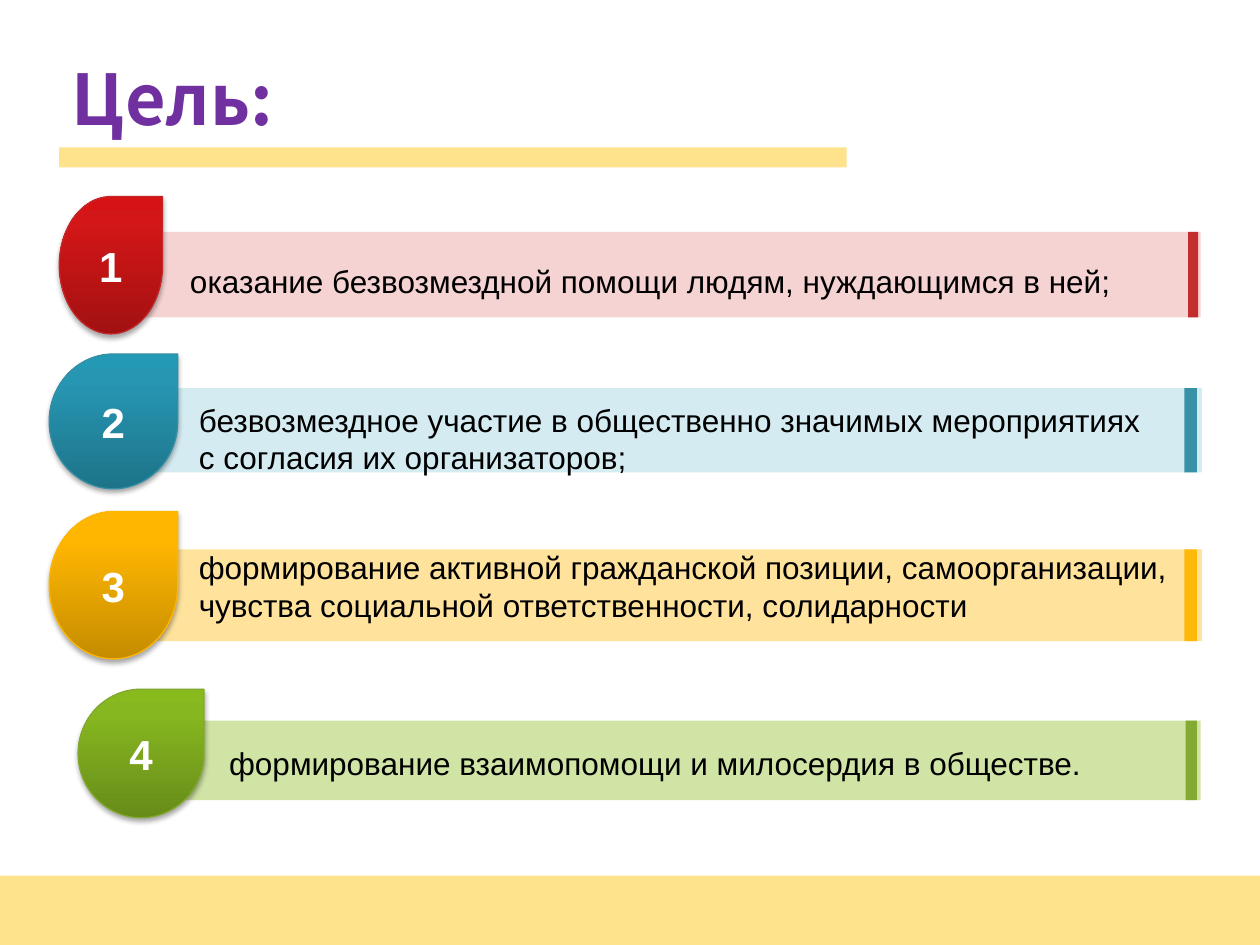
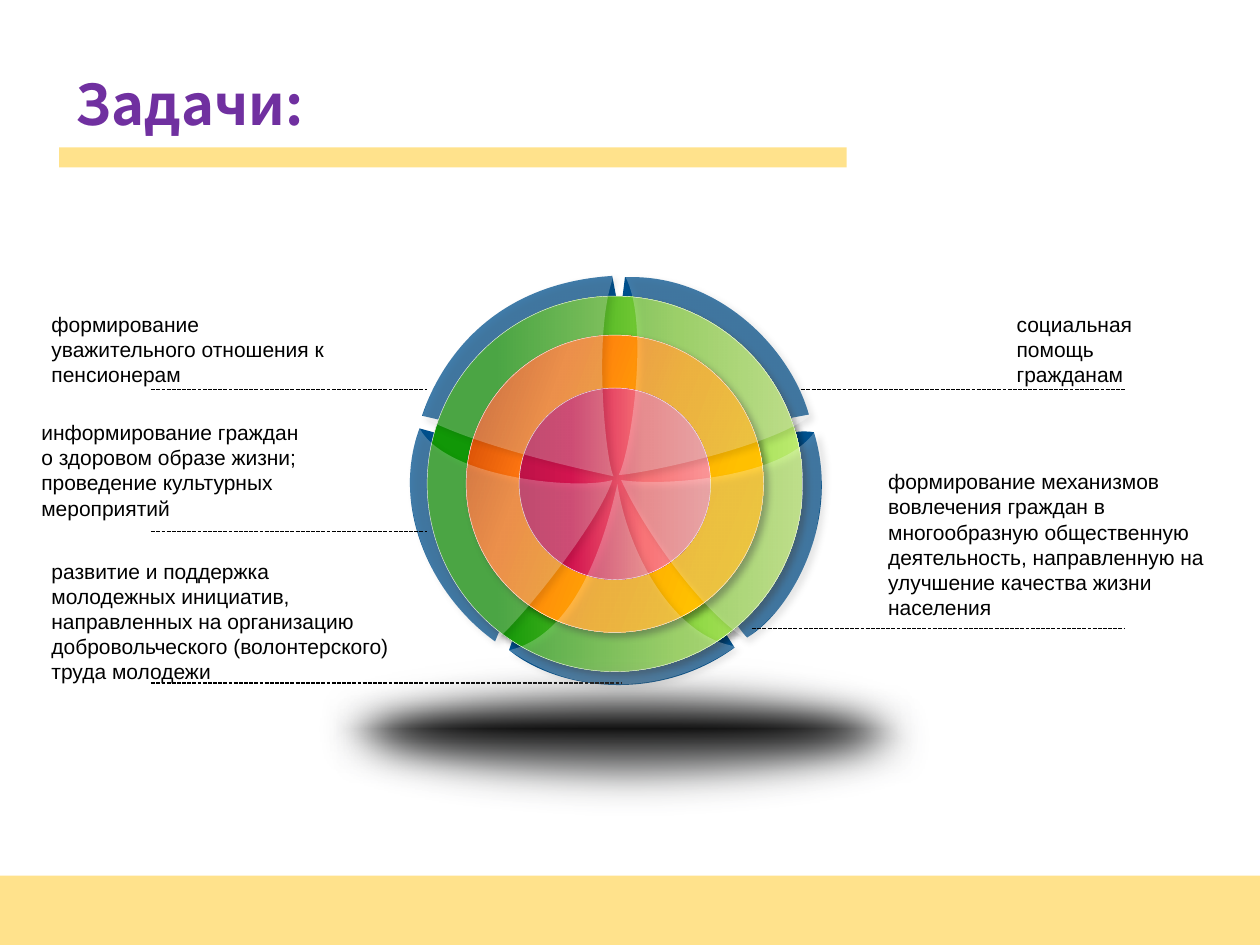
from dataclasses import dataclass
from typing import NamedTuple, Optional

from lxml import etree
from pptx import Presentation
from pptx.dml.color import RGBColor
from pptx.enum.dml import MSO_LINE_DASH_STYLE as Dash
from pptx.enum.shapes import MSO_CONNECTOR as Connector, MSO_SHAPE as Preset
from pptx.enum.text import MSO_ANCHOR as Anchor, MSO_AUTO_SIZE as AutoSize, PP_ALIGN as Align
from pptx.oxml import parse_xml
from pptx.oxml.ns import nsdecls, qn
from pptx.util import Inches, Pt

COLORS = {
    "band": "FFC000", "title": "7030A0", "text": "000000", "white": "FFFFFF",
    "segment": "00518E", "shadow": "000000", "floor_shadow": "535455",
}
BODY_FONT = "Arial"
TITLE_FONT = "Noto Sans CJK SC"
TITLE_ONLY = 5


class Box(NamedTuple):
    left: float
    top: float
    width: float
    height: float


class Shadow(NamedTuple):
    color: str
    alpha: int
    blur: float
    distance: float
    angle: int


class Gradient(NamedTuple):
    stops: tuple
    angle: Optional[int]


@dataclass
class Goal:
    number: str
    text: str
    badge: Box
    bar: Box
    accent_left: float
    accent_width: float
    text_box: Box
    tint: str
    accent: str
    outline: str
    shades: tuple


@dataclass
class Task:
    text: str
    box: Box
    line_start: float
    line_end: float
    line_top: float


BADGE_SHADOW = Shadow(COLORS["shadow"], 35, 3.1, 1.8, 90)
WHEEL_SHADOW = Shadow(COLORS["shadow"], 40, 4, 3, 45)
FLOOR_SHADOW = Shadow(COLORS["floor_shadow"], 100, 0, 8.5, 45)

GOALS = [
    Goal("1", "оказание безвозмездной помощи людям, нуждающимся в ней;",
         Box(0.47, 1.56, 0.82, 1.09), Box(1.03, 1.84, 8.5, 0.68), 9.43, 0.08,
         Box(1.41, 2.03, 7.97, 0.4), "F5D3D3", "C32D2E", "C22829",
         ("A21112", "D31617", "D71214")),
    Goal("2", "безвозмездное участие в общественно значимых мероприятиях "
         "с согласия их организаторов;",
         Box(0.39, 2.81, 1.02, 1.07), Box(1.1, 3.08, 8.44, 0.67), 9.4, 0.1,
         Box(1.48, 3.13, 7.81, 0.71), "D4EBF1", "3891A7", "348FA6",
         ("1D7489", "2696B2", "2499B5")),
    Goal("3", "формирование активной гражданской позиции, самоорганизации, "
         "чувства социальной ответственности, солидарности",
         Box(0.39, 4.06, 1.02, 1.17), Box(1.1, 4.36, 8.44, 0.73), 9.4, 0.1,
         Box(1.48, 4.3, 7.97, 0.71), "FFE39D", "FEB80A", "FEB604",
         ("C58C00", "FFB601", "FFB602")),
    Goal("4", "формирование взаимопомощи и милосердия в обществе.",
         Box(0.62, 5.47, 1, 1.02), Box(1.31, 5.72, 8.22, 0.63), 9.41, 0.09,
         Box(1.72, 5.86, 7.66, 0.4), "D0E4A6", "84AA33", "82A92F",
         ("678C19", "86B620", "88BA1D")),
]

TASKS = [
    Task("формирование уважительного отношения к пенсионерам",
         Box(0.31, 2.42, 2.42, 0.71), 1.2, 3.39, 3.09),
    Task("информирование граждан о здоровом образе жизни; проведение культурных мероприятий",
         Box(0.23, 3.28, 2.34, 0.91), 1.2, 3.39, 4.22),
    Task("развитие и поддержка молодежных инициатив, направленных на организацию "
         "добровольческого (волонтерского) труда молодежи",
         Box(0.31, 4.38, 2.89, 1.11), 1.2, 4.94, 5.42),
    Task("социальная помощь гражданам",
         Box(7.97, 2.42, 1.25, 0.71), 6.36, 8.93, 3.09),
    Task("формирование механизмов вовлечения граждан в многообразную общественную "
         "деятельность, направленную на улучшение качества жизни населения",
         Box(6.95, 3.67, 2.81, 1.31), 5.97, 8.93, 4.99),
]

RIM_SEGMENTS = [
    [(4.96, 2.2), (4.94, 2.36), (4.96, 2.52), (6.26, 3.32), (6.42, 3.29),
     (6.26, 2.73, 5.67, 2.17, 4.96, 2.2)],
    [(6.46, 3.43), (6.39, 3.42, 6.31, 3.42, 6.24, 3.45), (5.83, 4.93),
     (5.87, 4.99, 5.9, 5.03, 5.93, 5.06), (6.28, 4.85, 6.68, 4.14, 6.46, 3.43)],
    [(4.04, 5.16), (4.08, 5.04), (4.95, 5.08), (5.55, 5.05), (5.76, 5.03),
     (5.83, 5.14), (5.19, 5.6, 4.41, 5.46, 4.04, 5.16)],
    [(3.33, 3.4), (3.62, 3.48), (4, 4.92), (3.93, 5.09),
     (3.45, 4.75, 3.09, 4.05, 3.33, 3.4)],
    [(3.35, 3.3), (3.74, 3.39), (4.91, 2.46), (4.86, 2.19),
     (3.76, 2.26, 3.43, 3.06, 3.35, 3.3)],
]

GLASS_SECTORS = [
    [(4.87, 2.19), (4.7, 2.65, 4.81, 3.68, 4.87, 3.78),
     (4.46, 3.69, 3.77, 3.53, 3.35, 3.31), (3.55, 2.66, 4.15, 2.19, 4.87, 2.19)],
    [(4.96, 2.19), (5.67, 2.19, 6.22, 2.65, 6.43, 3.3),
     (6.11, 3.55, 5.1, 3.76, 4.91, 3.77), (5.01, 3.58, 5.16, 2.55, 4.96, 2.19)],
    [(6.47, 3.42), (6.52, 3.57, 6.53, 3.68, 6.52, 3.85),
     (6.5, 4.41, 6.3, 4.79, 5.92, 5.07), (5.55, 4.84, 5.09, 4.17, 4.93, 3.81),
     (5.25, 3.86, 6.22, 3.8, 6.47, 3.42)],
    [(4.9, 3.84), (4.99, 4.43, 5.37, 5.06, 5.84, 5.13),
     (5.57, 5.32, 5.25, 5.43, 4.9, 5.43), (4.55, 5.43, 4.3, 5.33, 4.04, 5.16),
     (4.57, 5.04, 4.8, 4.29, 4.9, 3.84)],
    [(3.33, 3.4), (3.55, 3.8, 4.6, 3.89, 4.86, 3.81),
     (4.76, 4.13, 4.18, 4.87, 3.93, 5.09), (3.56, 4.84, 3.27, 4.36, 3.25, 3.83),
     (3.25, 3.66, 3.28, 3.55, 3.33, 3.4)],
]

RINGS = [
    (Box(3.39, 2.35, 2.98, 2.98), WHEEL_SHADOW,
     Gradient(((18, "119707"), (67, "8AD53F"), (100, "BCEB6F")), 0)),
    (Box(3.7, 2.66, 2.36, 2.36), WHEEL_SHADOW,
     Gradient(((0, "C73E01"), (27, "FF7711"), (59, "FFAA01"),
               (80, "FFC000"), (100, "FECE02")), 20)),
    (Box(4.12, 3.08, 1.52, 1.52), None,
     Gradient(((0, "BE1247"), (27, "D2144F"), (66, "F87477"), (100, "FA9496")), 0)),
]


def inches(*values: float) -> list:
    return [Inches(value) for value in values]


def set_gradient(shape, gradient: Gradient) -> None:
    stops = "".join(
        f'<a:gs pos="{position * 1000}"><a:srgbClr val="{color}">'
        + "".join(f'<a:alpha val="{value * 1000}"/>' for value in alpha)
        + "</a:srgbClr></a:gs>"
        for position, color, *alpha in gradient.stops)
    if gradient.angle is None:
        direction = ('<a:path path="shape"><a:fillToRect l="50000" t="50000" '
                     'r="50000" b="50000"/></a:path>')
    else:
        direction = f'<a:lin ang="{gradient.angle * 60000}" scaled="0"/>'
    shape.fill.background()
    properties = shape.element.spPr
    properties.replace(properties.find(qn("a:noFill")), parse_xml(
        f'<a:gradFill {nsdecls("a")} rotWithShape="1"><a:gsLst>{stops}</a:gsLst>'
        f"{direction}</a:gradFill>"))


def style_shape(shape, fill, alpha: int = 100, outline: Optional[str] = None,
                line_width: float = 0.75, shadow: Optional[Shadow] = None,
                soft_edge: float = 0):
    if isinstance(fill, Gradient):
        set_gradient(shape, fill)
    else:
        shape.fill.solid()
        shape.fill.fore_color.rgb = RGBColor.from_string(fill)
        if alpha < 100:
            color = shape.element.spPr.find(qn("a:solidFill")).find(qn("a:srgbClr"))
            etree.SubElement(color, qn("a:alpha"), val=str(alpha * 1000))
    if outline:
        shape.line.color.rgb = RGBColor.from_string(outline)
        shape.line.width = Pt(line_width)
    else:
        shape.line.fill.background()
    shape.shadow.inherit = False
    effects = shape.element.spPr.find(qn("a:effectLst"))
    if shadow:
        effects.append(parse_xml(
            f'<a:outerShdw {nsdecls("a")} blurRad="{Pt(shadow.blur)}" '
            f'dist="{Pt(shadow.distance)}" dir="{shadow.angle * 60000}" rotWithShape="0">'
            f'<a:srgbClr val="{shadow.color}"><a:alpha val="{shadow.alpha * 1000}"/>'
            f"</a:srgbClr></a:outerShdw>"))
    if soft_edge:
        etree.SubElement(effects, qn("a:softEdge"), rad=str(Pt(soft_edge)))
    return shape


def add_preset(parent, preset, box: Box, fill, **style):
    return style_shape(parent.shapes.add_shape(preset, *inches(*box)), fill, **style)


def curve_extent(steps: list, axis: int, samples: int = 20) -> tuple:
    values = [steps[0][axis]]
    for step in steps[1:]:
        a, (*controls, end) = values[-1], step[axis::2]
        if controls:
            b, c = controls
            for t in (index / samples for index in range(1, samples)):
                values.append(a * (1 - t) ** 3 + 3 * b * t * (1 - t) ** 2
                              + 3 * c * t * t * (1 - t) + end * t ** 3)
        values.append(end)
    return min(values), max(values)


def add_outline(parent, steps: list, fill: str, **style) -> None:
    start, *ends = [inches(*step[-2:]) for step in steps]
    builder = parent.shapes.build_freeform(*start)
    builder.add_line_segments(ends, close=True)
    shape = builder.convert_to_shape()
    (left, right), (top, bottom) = curve_extent(steps, 0), curve_extent(steps, 1)
    shape.left, shape.top, shape.width, shape.height = inches(
        left, top, right - left, bottom - top)
    outline = next(shape.element.iter(qn("a:path")))
    outline.set("w", str(shape.width))
    outline.set("h", str(shape.height))
    for command, step in zip(list(outline), steps):
        if len(step) == 6:
            curve = etree.Element(qn("a:cubicBezTo"))
            outline.replace(command, curve)
            command = curve
        for point in list(command):
            command.remove(point)
        for x, y in zip(step[::2], step[1::2]):
            etree.SubElement(command, qn("a:pt"), x=str(Inches(x - left)),
                             y=str(Inches(y - top)))
    style_shape(shape, fill, **style)


def write_text(shape, text: str, size: int, color: str, bold: bool = False,
               font: str = BODY_FONT, align=Align.LEFT) -> None:
    paragraph = shape.text_frame.paragraphs[0]
    paragraph.alignment = align
    run = paragraph.add_run()
    run.text = text
    run.font.name = font
    run.font.size = Pt(size)
    run.font.bold = bold
    run.font.color.rgb = RGBColor.from_string(color)


def add_text(slide, box: Box, text: str, size: int) -> None:
    text_box = slide.shapes.add_textbox(*inches(*box))
    text_box.text_frame.word_wrap = True
    text_box.text_frame.auto_size = AutoSize.SHAPE_TO_FIT_TEXT
    write_text(text_box, text, size, COLORS["text"])


def add_titled_slide(presentation, title: str, box: Box, size: int):
    slide = presentation.slides.add_slide(presentation.slide_layouts[TITLE_ONLY])
    shape = slide.shapes.title
    shape.left, shape.top, shape.width, shape.height = inches(*box)
    shape.text_frame.auto_size = AutoSize.NONE
    shape.text_frame.vertical_anchor = Anchor.MIDDLE
    write_text(shape, title, size, COLORS["title"], True, TITLE_FONT)
    return slide


def add_master_bands(presentation, slide) -> None:
    tree = presentation.slide_master.shapes.element
    for position, box in enumerate((Box(0, 6.95, 10, 0.55), Box(0.47, 1.17, 6.25, 0.16))):
        band = add_preset(slide, Preset.RECTANGLE, box, COLORS["band"], alpha=45)
        tree.insert(2 + position, band.element)


def add_goal(slide, goal: Goal) -> None:
    group = slide.shapes.add_group_shape()
    add_preset(group, Preset.RECTANGLE, goal.bar, goal.tint)
    badge = add_preset(group, Preset.TEAR, goal.badge,
                       Gradient(tuple(zip((0, 80, 100), goal.shades)), 270),
                       outline=goal.outline, shadow=BADGE_SHADOW)
    badge.text_frame.vertical_anchor = Anchor.MIDDLE
    write_text(badge, goal.number, 24, COLORS["white"], True, align=Align.CENTER)
    accent = Box(goal.accent_left, goal.bar.top, goal.accent_width, goal.bar.height)
    add_preset(group, Preset.RECTANGLE, accent, goal.accent)
    add_text(slide, goal.text_box, goal.text, 18)


def add_wheel(slide) -> None:
    group = slide.shapes.add_group_shape()
    for steps in RIM_SEGMENTS:
        add_outline(group, steps, COLORS["segment"])
    for box, shadow, gradient in RINGS:
        add_preset(group, Preset.OVAL, box, gradient, outline=COLORS["white"],
                   line_width=0.25, shadow=shadow)
    for steps in GLASS_SECTORS:
        add_outline(group, steps, COLORS["white"], alpha=25, shadow=WHEEL_SHADOW)


def add_task(slide, task: Task) -> None:
    add_text(slide, task.box, task.text, 12)
    connector = slide.shapes.add_connector(Connector.STRAIGHT, *inches(
        task.line_start, task.line_top, task.line_end, task.line_top))
    connector.line.color.rgb = RGBColor.from_string(COLORS["text"])
    connector.line.width = Pt(0.75)
    connector.line.dash_style = Dash.SQUARE_DOT
    etree.SubElement(connector.element.spPr, qn("a:effectLst"))


def main() -> None:
    presentation = Presentation()
    presentation.slide_width, presentation.slide_height = inches(10, 7.5)

    goals_slide = add_titled_slide(presentation, "Цель:", Box(0.47, 0.39, 6.17, 0.77), 40)
    add_master_bands(presentation, goals_slide)
    for goal in GOALS:
        add_goal(goals_slide, goal)

    tasks_slide = add_titled_slide(presentation, "Задачи:", Box(0.5, 0.47, 6.17, 0.7), 32)
    add_wheel(tasks_slide)
    for task in TASKS:
        add_task(tasks_slide, task)
    add_preset(tasks_slide, Preset.OVAL, Box(2.05, 5.09, 5.71, 1.38),
               Gradient(((0, "121212"), (100, "FFFFFF", 0)), None),
               shadow=FLOOR_SHADOW, soft_edge=25)

    presentation.save("out.pptx")


if __name__ == "__main__":
    main()
